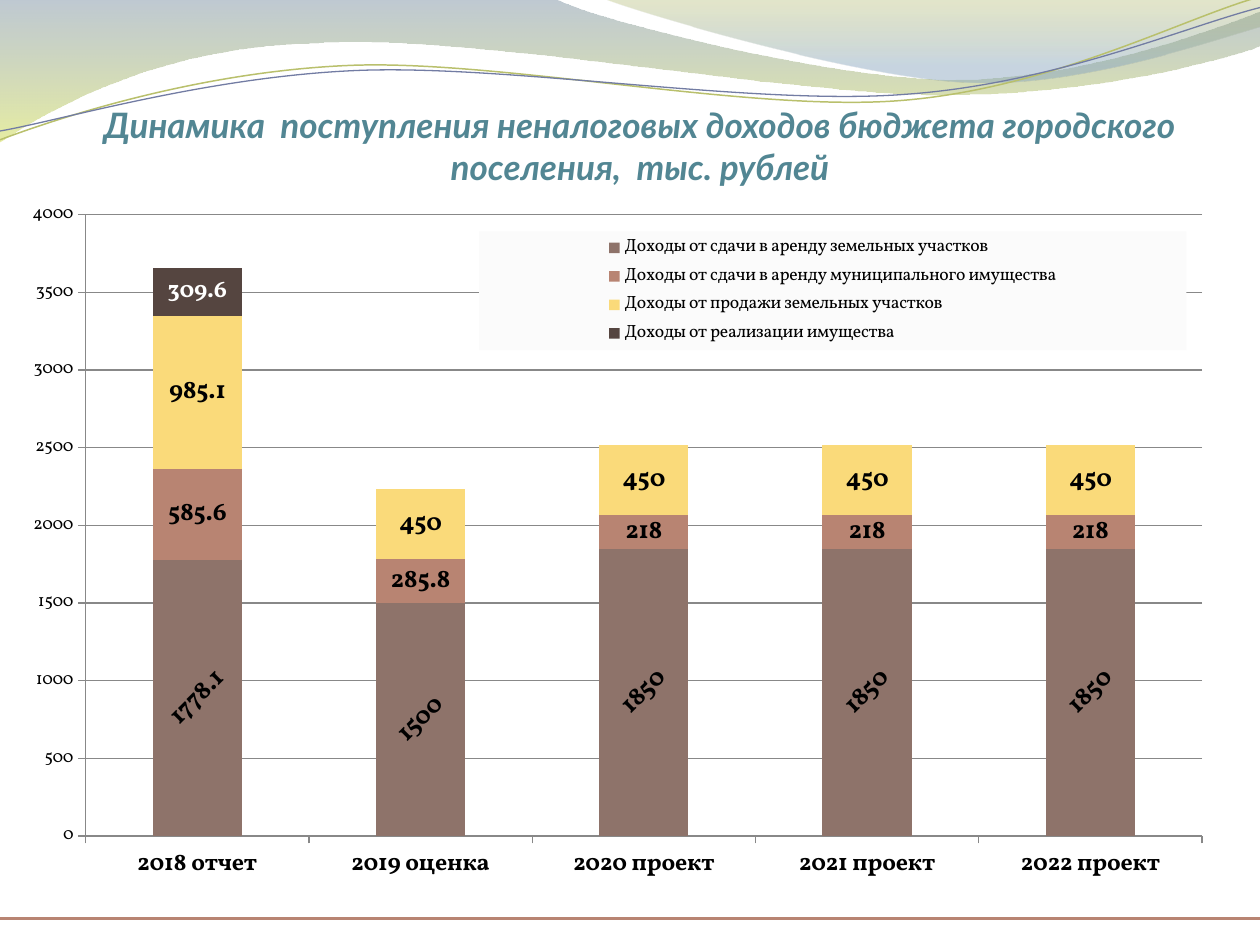
from lxml import etree
from pptx import Presentation
from pptx.chart.data import CategoryChartData
from pptx.dml.color import RGBColor
from pptx.enum.chart import XL_CHART_TYPE, XL_LEGEND_POSITION, XL_TICK_MARK
from pptx.enum.shapes import MSO_CONNECTOR
from pptx.enum.text import MSO_ANCHOR, PP_ALIGN
from pptx.oxml import parse_xml
from pptx.oxml.ns import nsdecls, qn
from pptx.util import Inches, Pt

TEAL = RGBColor(0x52, 0x86, 0x93)
SLATE = RGBColor(0x72, 0x88, 0x9B)
LIME = RGBColor(0xD3, 0xDE, 0x57)
OLIVE = RGBColor(0xA4, 0xAC, 0x50)
SKY = RGBColor(0x84, 0xA3, 0xBD)
PALE_GREEN = RGBColor(0xB9, 0xC0, 0x6C)
VIOLET = RGBColor(0x72, 0x7C, 0xA3)
BROWN = RGBColor(0x8E, 0x73, 0x6A)
CLAY = RGBColor(0xB8, 0x84, 0x72)
YELLOW = RGBColor(0xFA, 0xDA, 0x7A)
DARK = RGBColor(0x55, 0x45, 0x40)
GRAY = RGBColor(0x88, 0x88, 0x88)
BLACK = RGBColor(0, 0, 0)
WHITE = RGBColor(0xFF, 0xFF, 0xFF)


def write_text(frame, text, *, font, size, color, bold=False, italic=False,
               align=PP_ALIGN.LEFT):
    frame.word_wrap = True
    paragraph = frame.paragraphs[0]
    paragraph.alignment = align
    run = paragraph.add_run()
    run.text = text
    run.font.name, run.font.size = font, Pt(size)
    run.font.bold, run.font.italic = bold, italic
    run.font.color.rgb = color


def manual_layout(x, y, w, h, target=""):
    return parse_xml(
        f'<c:layout {nsdecls("c")}><c:manualLayout>{target}'
        '<c:xMode val="edge"/><c:yMode val="edge"/>'
        f'<c:x val="{x}"/><c:y val="{y}"/><c:w val="{w}"/><c:h val="{h}"/>'
        '</c:manualLayout></c:layout>')


prs = Presentation()
prs.slide_width, prs.slide_height = Inches(10), Inches(7.5)
slide = prs.slides.add_slide(prs.slide_layouts[5])
shapes = slide.shapes

# Header waves: a pair is a straight segment, six numbers are a Bezier curve
waves = [
    dict(start=(0, 0), stops=[(SLATE, 45, 0), (LIME, 55, 1)], segments=[
        (4.4, -0.01), (4.76, 0.17, 6.64, 0.63, 7.58, 0.63),
        (8.53, 0.63, 9.58, 0.26, 10, 0.09), (10.01, 0.36),
        (9.83, 0.44, 8.7, 0.76, 7.46, 0.75), (6.22, 0.75, 3.82, 0.28, 2.57, 0.34),
        (1.29, 0.36, 0.46, 0.83, -0.01, 1.13), (0, 0)]),
    dict(start=(4.79, -0.01), stops=[(OLIVE, 30, 0), (SKY, 45, 0.8)], segments=[
        (5.09, 0.11, 6.82, 0.62, 7.69, 0.65), (8.56, 0.69, 9.61, 0.32, 10, 0.21),
        (10, 0), (4.79, -0.01)]),
    dict(start=(0, 1.11), line=(PALE_GREEN, 0.85), segments=[
        (0.48, 0.93, 1.58, 0.57, 2.77, 0.52), (3.95, 0.47, 5.93, 0.89, 7.13, 0.8),
        (8.33, 0.71, 9.38, 0.15, 9.98, -0.02)]),
    dict(start=(0, 1.04), line=(VIOLET, 0.75), segments=[
        (0.47, 0.96, 1.64, 0.61, 2.83, 0.56), (4.03, 0.51, 5.97, 0.84, 7.17, 0.75),
        (8.36, 0.67, 9.41, 0.21, 10, 0.06)]),
]
for wave in waves:
    start_x, start_y = wave["start"]
    builder = shapes.build_freeform(Inches(start_x), Inches(start_y))
    builder.add_line_segments([(Inches(segment[-2]), Inches(segment[-1]))
                               for segment in wave["segments"]], close="stops" in wave)
    ribbon = builder.convert_to_shape()
    ribbon.shadow.inherit = False

    # Bend the straight segments that have control points
    for edge, segment in zip(list(ribbon.element.iter(qn("a:lnTo"))), wave["segments"]):
        if len(segment) == 2:
            continue
        curve = etree.Element(qn("a:cubicBezTo"))
        for x, y in zip(segment[::2], segment[1::2]):
            etree.SubElement(curve, qn("a:pt"), x=str(Inches(x) - ribbon.left),
                             y=str(Inches(y) - ribbon.top))
        edge.getparent().replace(edge, curve)

    if "line" in wave:
        ribbon.fill.background()
        color, width = wave["line"]
        ribbon.line.color.rgb, ribbon.line.width = color, Pt(width)
        continue
    ribbon.line.fill.background()
    ribbon.fill.gradient()
    ribbon.fill.gradient_angle = 270
    for stop, (color, _, position) in zip(ribbon.fill.gradient_stops, wave["stops"]):
        stop.color.rgb, stop.position = color, position
    for tint, (_, opacity, _) in zip(ribbon.element.iter(qn("a:srgbClr")), wave["stops"]):
        etree.SubElement(tint, qn("a:alpha")).set("val", str(opacity * 1000))

# Footer rule
footer = shapes.add_connector(MSO_CONNECTOR.STRAIGHT, Inches(0), Inches(7.29),
                              Inches(10), Inches(7.29))
footer.line.color.rgb, footer.line.width = CLAY, Pt(2)
etree.SubElement(footer.element.spPr, qn("a:effectLst"))

# Title
title = shapes.title
title.left, title.top = Inches(0.51), Inches(0.77)
title.width, title.height = Inches(9.14), Inches(0.77)
title.text_frame.vertical_anchor = MSO_ANCHOR.TOP
write_text(title.text_frame,
           "Динамика  поступления неналоговых доходов бюджета городского "
           "поселения,  тыс. рублей",
           font="Lato", size=20, color=TEAL, bold=True, italic=True,
           align=PP_ALIGN.CENTER)

# Income chart
incomes = [
    ("Доходы от сдачи в аренду земельных участков",
     (1778.1, 1500, 1850, 1850, 1850), BROWN, 14.5, BLACK),
    ("Доходы от сдачи в аренду муниципального имущества",
     (585.6, 285.8, 218, 218, 218), CLAY, 14.5, BLACK),
    ("Доходы от продажи земельных участков",
     (985.1, 450, 450, 450, 450), YELLOW, 14.5, BLACK),
    ("Доходы от реализации имущества",
     (309.6, None, None, None, None), DARK, 13.7, WHITE),
]
income_data = CategoryChartData()
income_data.categories = ["2018 отчет", "2019 оценка", "2020 проект",
                          "2021 проект", "2022 проект"]
for name, values, *_ in incomes:
    income_data.add_series(name, values)
chart = shapes.add_chart(XL_CHART_TYPE.COLUMN_STACKED, Inches(0.22), Inches(1.55),
                         Inches(9.58), Inches(5.51), income_data).chart
chart.has_title = False
chart.font.name, chart.font.size = "Vollkorn", Pt(10.1)
chart.font.color.rgb = BLACK
bars = chart.plots[0]
bars.gap_width, bars.overlap, bars.vary_by_categories = 150, 100, False

for series, (_, _, color, size, label_color) in zip(bars.series, incomes):
    series.format.fill.solid()
    series.format.fill.fore_color.rgb = color
    labels = series.data_labels
    labels.show_value = True
    labels.font.name, labels.font.size = "Vollkorn", Pt(size)
    labels.font.bold, labels.font.color.rgb = True, label_color

# Land rent labels run diagonally
land_rent = bars.series[0]
for body in land_rent.data_labels._element.iter(qn("a:bodyPr")):
    body.set("rot", "-2700000")
    body.set("vert", "horz")

# Axes
amounts, years = chart.value_axis, chart.category_axis
amounts.minimum_scale, amounts.maximum_scale, amounts.major_unit = 0, 4000, 500
amounts.has_major_gridlines = True
for axis, size in ((amounts, 10.1), (years, 13.7)):
    axis.major_tick_mark = XL_TICK_MARK.OUTSIDE
    axis.tick_labels.font.name, axis.tick_labels.font.size = "Vollkorn", Pt(size)
    axis.tick_labels.font.bold = axis is years
    axis.tick_labels.font.color.rgb = BLACK
for line in (amounts.format.line, years.format.line, amounts.major_gridlines.format.line):
    line.color.rgb, line.width = GRAY, Pt(0.75)

# Legend inside the plot area
chart.has_legend = True
legend = chart.legend
legend.position = XL_LEGEND_POSITION.TOP
legend.include_in_layout = False
legend.font.name, legend.font.size = "Vollkorn", Pt(10.1)
legend.font.color.rgb = BLACK
legend_xml = legend._element
plot_area = chart._chartSpace.find(".//" + qn("c:plotArea"))
for parent in (legend_xml, plot_area):
    for old_layout in parent.findall(qn("c:layout")):
        parent.remove(old_layout)
plot_area.insert(0, manual_layout(0.048, 0.028, 0.925, 0.895,
                                  '<c:layoutTarget val="inner"/>'))
legend_xml.find(qn("c:legendPos")).addnext(manual_layout(0.374, 0.052, 0.586, 0.171))
legend_xml.find(qn("c:overlay")).addnext(parse_xml(
    f'<c:spPr {nsdecls("c", "a")}><a:solidFill><a:srgbClr val="FBFBFB"/>'
    '</a:solidFill></c:spPr>'))

prs.save("out.pptx")
